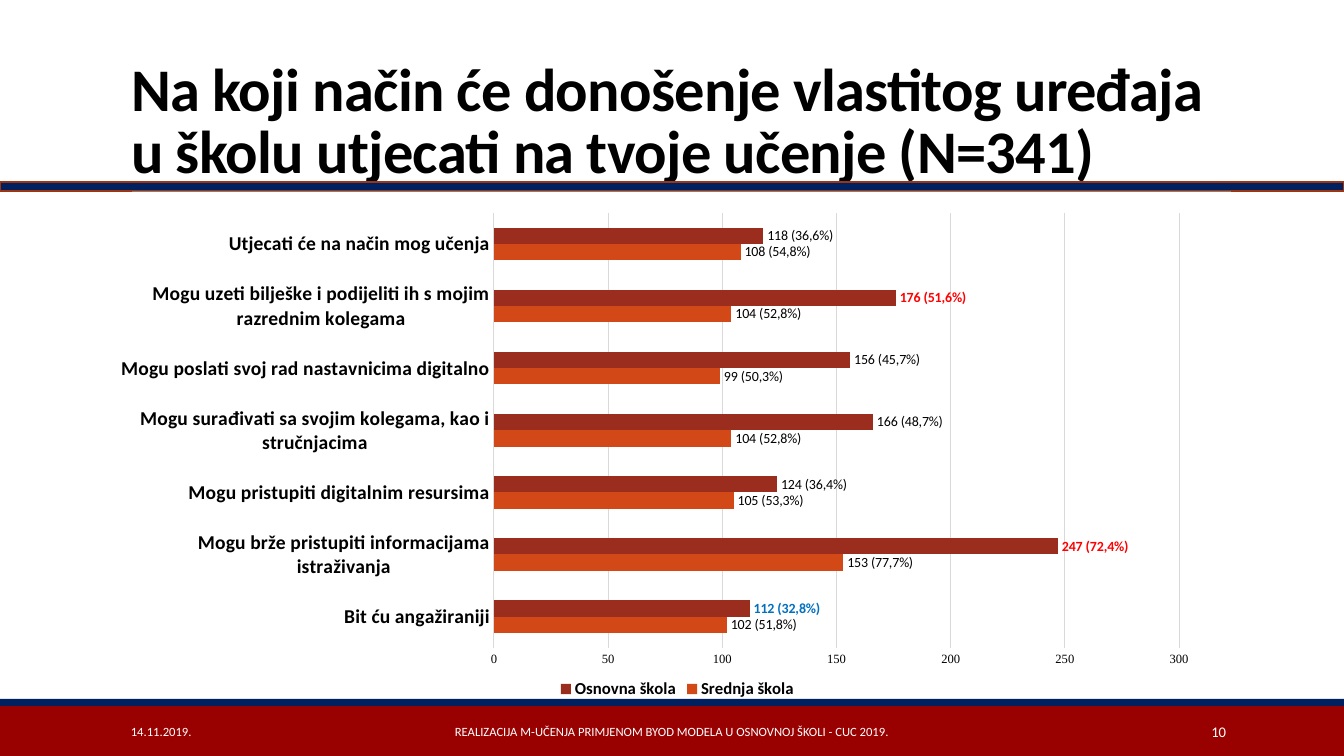
from lxml import etree
from pptx import Presentation
from pptx.chart.data import CategoryChartData
from pptx.dml.color import RGBColor
from pptx.enum.chart import XL_CHART_TYPE, XL_LABEL_POSITION, XL_LEGEND_POSITION, XL_TICK_MARK
from pptx.enum.shapes import MSO_CONNECTOR, MSO_SHAPE
from pptx.enum.text import MSO_ANCHOR, PP_ALIGN
from pptx.oxml import parse_xml
from pptx.oxml.ns import nsdecls, qn
from pptx.util import Pt

PX = 914400 / 100.8
BLACK = RGBColor(0x00, 0x00, 0x00)
WHITE = RGBColor(0xFF, 0xFF, 0xFF)
NAVY = RGBColor(0x00, 0x20, 0x60)
CRIMSON = RGBColor(0x99, 0x00, 0x00)
RUST = RGBColor(0x9C, 0x35, 0x11)
GRAY = RGBColor(0x80, 0x80, 0x80)
LIGHT_GRAY = RGBColor(0xD9, 0xD9, 0xD9)
ORANGE = RGBColor(0xD3, 0x48, 0x17)
BROWN = RGBColor(0x9B, 0x2D, 0x1F)
RED = RGBColor(0xFF, 0x00, 0x00)
BLUE = RGBColor(0x00, 0x70, 0xC0)


def box(*lengths):
    return [round(length * PX) for length in lengths]


def style(font, size, color=BLACK, bold=False, name="Calibri"):
    font.name = name
    font.size = Pt(size)
    font.bold = bold
    font.color.rgb = color


presentation = Presentation()
presentation.slide_width, presentation.slide_height = box(1344, 756)
slide = presentation.slides.add_slide(presentation.slide_layouts[5])

# Footer band and navy rules
for top, height, fill, outline in [
    (706, 50, CRIMSON, None),
    (699, 7, NAVY, None),
    (182, 9, NAVY, RUST),
]:
    band = slide.shapes.add_shape(MSO_SHAPE.RECTANGLE, *box(0, top, 1344, height))
    band.shadow.inherit = False
    band.fill.solid()
    band.fill.fore_color.rgb = fill
    if outline:
        band.line.color.rgb = outline
        band.line.width = Pt(1.25)
    else:
        band.line.fill.background()

rule = slide.shapes.add_connector(MSO_CONNECTOR.STRAIGHT, *box(132, 191, 1231, 191))
rule.line.color.rgb = GRAY
rule.line.width = Pt(0.5)
etree.SubElement(rule._element.spPr, qn("a:effectLst"))

# Title
title = slide.shapes.title
title.left, title.top, title.width, title.height = box(121, 31, 1109, 160)
title.text_frame.text = "Na koji način će donošenje vlastitog uređaja u školu utjecati na tvoje učenje (N=341)"
title.text_frame.word_wrap = True
title.text_frame.vertical_anchor = MSO_ANCHOR.BOTTOM
paragraph = title.text_frame.paragraphs[0]
paragraph.alignment = PP_ALIGN.LEFT
paragraph.line_spacing = 0.85
style(paragraph.runs[0].font, 43.2, bold=True)
paragraph.runs[0].font._element.set("spc", "-50")

# Chart data: answers with count and share for each school
categories = [
    "Bit ću angažiraniji",
    "Mogu brže pristupiti informacijama istraživanja",
    "Mogu pristupiti digitalnim resursima",
    "Mogu surađivati sa svojim kolegama, kao i stručnjacima",
    "Mogu poslati svoj rad nastavnicima digitalno",
    "Mogu uzeti bilješke i podijeliti ih s mojim razrednim kolegama",
    "Utjecati će na način mog učenja",
]
schools = [
    ("Srednja škola", ORANGE, [102, 153, 105, 104, 99, 104, 108],
     ["51,8", "77,7", "53,3", "52,8", "50,3", "52,8", "54,8"], {}),
    ("Osnovna škola", BROWN, [112, 247, 124, 166, 156, 176, 118],
     ["32,8", "72,4", "36,4", "48,7", "45,7", "51,6", "36,6"], {0: BLUE, 1: RED, 5: RED}),
]
chart_data = CategoryChartData()
chart_data.categories = categories
for name, color, counts, shares, highlights in schools:
    chart_data.add_series(name, counts)

chart = slide.shapes.add_chart(
    XL_CHART_TYPE.BAR_CLUSTERED, *box(121, 191, 1109, 512), chart_data
).chart
chart.has_title = False
style(chart.font, 10)
plot = chart.plots[0]
plot.gap_width = 182
plot.overlap = 0
plot.vary_by_categories = False

# Bars and their labels
for series, (name, color, counts, shares, highlights) in zip(plot.series, schools):
    series.format.fill.solid()
    series.format.fill.fore_color.rgb = color
    series.data_labels.show_value = True
    series.data_labels.position = XL_LABEL_POSITION.OUTSIDE_END
    style(series.data_labels.font, 11, bold=True)
    for index, (count, share) in enumerate(zip(counts, shares)):
        label = series.points[index].data_label
        label.text_frame.text = f"{count} ({share}%)"
        label.text_frame.word_wrap = False
        label.position = XL_LABEL_POSITION.OUTSIDE_END
        style(label.text_frame.paragraphs[0].runs[0].font, 10,
              highlights.get(index, BLACK), index in highlights)

# Axes and legend
category_axis, value_axis = chart.category_axis, chart.value_axis
for axis in (category_axis, value_axis):
    axis.major_tick_mark = axis.minor_tick_mark = XL_TICK_MARK.NONE
style(category_axis.tick_labels.font, 14, bold=True)
style(value_axis.tick_labels.font, 9, name="Times New Roman")
value_axis.minimum_scale = 0
value_axis.maximum_scale = 300
value_axis.major_unit = 50
value_axis.format.line.fill.background()
for line in (category_axis.format.line, value_axis.major_gridlines.format.line):
    line.color.rgb = LIGHT_GRAY
    line.width = Pt(0.75)
chart.has_legend = True
chart.legend.position = XL_LEGEND_POSITION.BOTTOM
chart.legend.include_in_layout = False
style(chart.legend.font, 12, bold=True)

# Fixed inner plot area
plot_area = chart._chartSpace.chart.plotArea
for layout in plot_area.findall(qn("c:layout")):
    plot_area.remove(layout)
plot_area.insert(0, parse_xml(
    f'<c:layout {nsdecls("c")}><c:manualLayout><c:layoutTarget val="inner"/>'
    '<c:xMode val="edge"/><c:yMode val="edge"/><c:x val="0.334"/><c:y val="0.043"/>'
    '<c:w val="0.62"/><c:h val="0.849"/></c:manualLayout></c:layout>'
))

# Footer texts
for left, width, text, size, alignment in [
    (121, 272, "14.11.2019.", 9, PP_ALIGN.LEFT),
    (406, 531, "REALIZACIJA M-UČENJA PRIMJENOM BYOD MODELA U OSNOVNOJ ŠKOLI - CUC 2019.",
     9, PP_ALIGN.CENTER),
    (1092, 144, "10", 10.5, PP_ALIGN.RIGHT),
]:
    footer = slide.shapes.add_textbox(*box(left, 712, width, 40))
    footer.text_frame.text = text
    footer.text_frame.word_wrap = True
    footer.text_frame.vertical_anchor = MSO_ANCHOR.MIDDLE
    paragraph = footer.text_frame.paragraphs[0]
    paragraph.alignment = alignment
    style(paragraph.runs[0].font, size, WHITE)

presentation.save("out.pptx")
